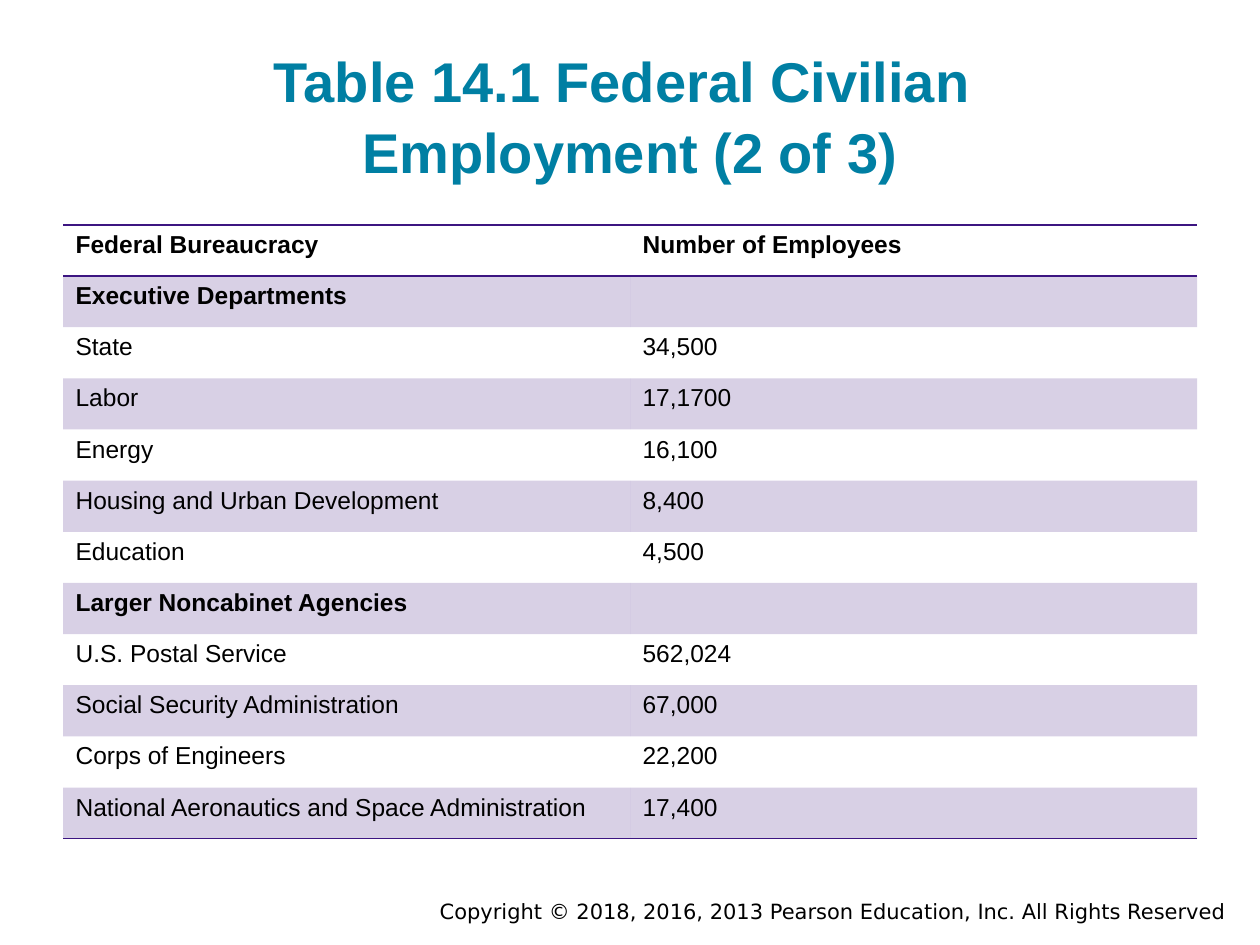
from dataclasses import dataclass

from lxml.etree import SubElement
from pptx import Presentation
from pptx.dml.color import RGBColor
from pptx.enum.text import MSO_ANCHOR, PP_ALIGN
from pptx.oxml.ns import qn
from pptx.util import Inches, Pt

TEAL = RGBColor(0x00, 0x7F, 0xA3)
PURPLE = RGBColor(0x3C, 0x15, 0x81)
BLACK = RGBColor(0, 0, 0)
NO_STYLE = "{2D5ABB26-0587-4C30-8999-92F81FD0307C}"
W, H = Inches(10), Inches(7.5)
MARGIN = 0.05  # share of the slide's width


@dataclass
class Row:
    name: str
    count: str = ""
    bold: bool = False


ROWS = [
    Row("Federal Bureaucracy", "Number of Employees", True),
    Row("Executive Departments", bold=True),
    Row("State", "34,500"),
    Row("Labor", "17,1700"),
    Row("Energy", "16,100"),
    Row("Housing and Urban Development", "8,400"),
    Row("Education", "4,500"),
    Row("Larger Noncabinet Agencies", bold=True),
    Row("U.S. Postal Service", "562,024"),
    Row("Social Security Administration", "67,000"),
    Row("Corps of Engineers", "22,200"),
    Row("National Aeronautics and Space Administration", "17,400"),
]


def set_font(p, size: int, name: str, color: RGBColor, bold: bool = False) -> None:
    f = p.font
    f.size, f.name, f.bold = Pt(size), name, bold
    f.color.rgb = color


def place(sp, x: float, y: float, w: float, h: float) -> None:
    """Position a shape by shares of the slide's size."""
    sp.left, sp.top = int(W * x), int(H * y)
    sp.width, sp.height = int(W * w), int(H * h)


def add_border(cell, side: str) -> None:
    ln = SubElement(cell._tc.get_or_add_tcPr(), qn(f"a:{side}"), w=str(Pt(1)))
    fill = SubElement(ln, qn("a:solidFill"))
    SubElement(fill, qn("a:srgbClr"), val=str(PURPLE))


def fill_cell(cell, shaded: bool) -> None:
    if not shaded:
        cell.fill.background()
        return
    cell.fill.solid()
    cell.fill.fore_color.rgb = PURPLE
    clr = cell._tc.tcPr.find(f".//{qn('a:solidFill')}/{qn('a:srgbClr')}")
    # Borders come before the fill, so the cell's own fill is the last one
    clr = cell._tc.tcPr.findall(qn("a:solidFill"))[-1][0]
    SubElement(clr, qn("a:alpha"), val="20000")


def add_employment_table(s, rows: list[Row]) -> None:
    frame = s.shapes.add_table(len(rows), 2, 0, 0, W, H)
    place(frame, MARGIN, 0.238, 1 - 2 * MARGIN, 0.65)
    table = frame.table
    table._tbl.tblPr.find(qn("a:tableStyleId")).text = NO_STYLE
    for col in table.columns:
        col.width = int(W * (1 - 2 * MARGIN) / 2)
    for i, row in enumerate(rows):
        table.rows[i].height = int(H * 0.65 / len(rows))
        for cell, text in zip(table.rows[i].cells, (row.name, row.count)):
            cell.text = text
            set_font(cell.text_frame.paragraphs[0], 14, "Arial", BLACK, row.bold)
            if i == 0:
                add_border(cell, "lnT")
            if i in (0, len(rows) - 1):
                add_border(cell, "lnB")
            fill_cell(cell, i % 2 == 1)


prs = Presentation()
prs.slide_width, prs.slide_height = W, H
s = prs.slides.add_slide(prs.slide_layouts[5])

# Copyright line
sp = s.shapes.add_textbox(0, 0, W, H)
place(sp, 0.2, 0.944, 0.783, 0.04)
tf = sp.text_frame
tf.word_wrap = True
p = tf.paragraphs[0]
p.text = "Copyright © 2018, 2016, 2013 Pearson Education, Inc. All Rights Reserved"
p.alignment = PP_ALIGN.RIGHT
set_font(p, 12, "DejaVu Sans", BLACK)

# Title
title = s.shapes.title
place(title, MARGIN, 0.032, 1 - 2 * MARGIN, 0.177)
tf = title.text_frame
tf.vertical_anchor = MSO_ANCHOR.BOTTOM
tf.margin_left = tf.margin_right = tf.margin_top = tf.margin_bottom = Inches(0.1)
p = tf.paragraphs[0]
p.text = "Table 14.1 Federal Civilian \vEmployment (2 of 3)"
p.alignment = PP_ALIGN.CENTER
p.line_spacing = 1.06
set_font(p, 32, "Arial", TEAL, True)

# Employment table
add_employment_table(s, ROWS)

prs.save("out.pptx")
